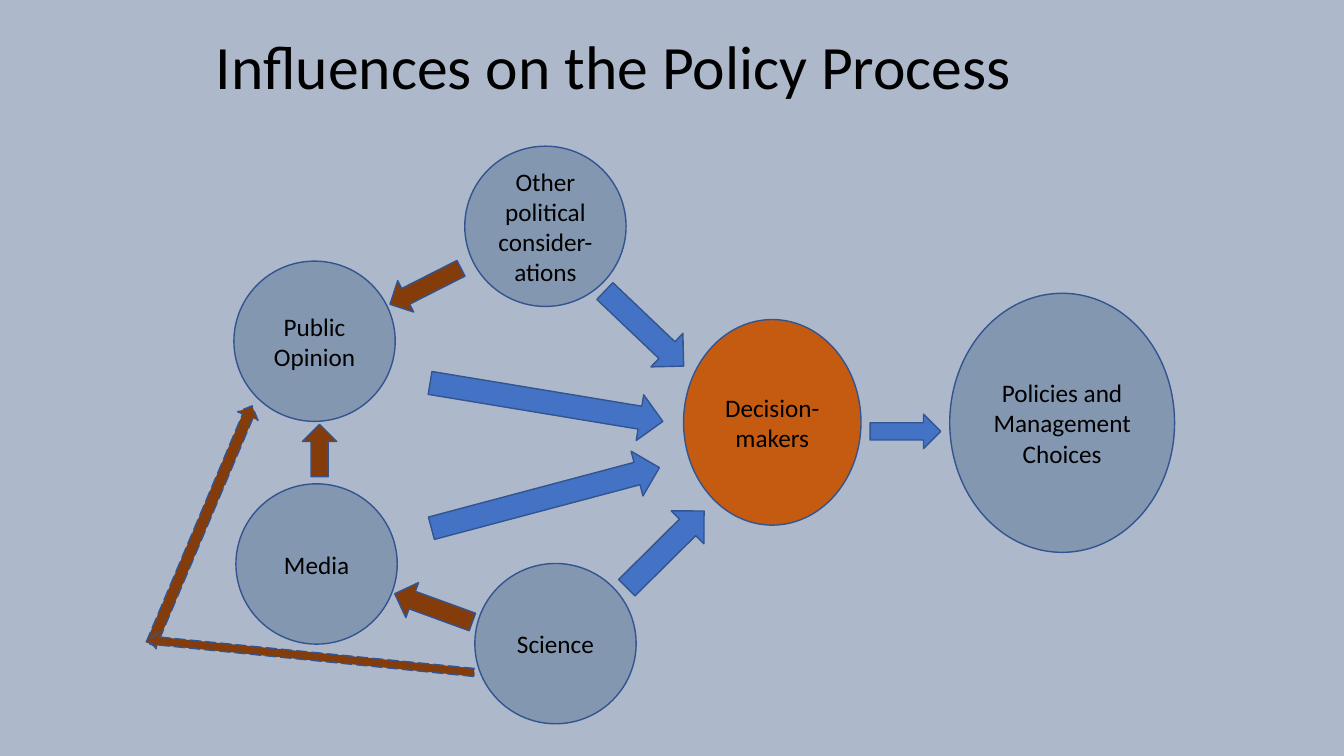
from pptx import Presentation
from pptx.dml.color import RGBColor
from pptx.enum.dml import MSO_LINE_DASH_STYLE as Dash
from pptx.enum.shapes import MSO_SHAPE as Shape
from pptx.enum.text import MSO_ANCHOR as Anchor, PP_ALIGN as Align
from pptx.util import Inches, Pt

BACKGROUND = RGBColor(0xAD, 0xB9, 0xCA)
BLACK = RGBColor(0x00, 0x00, 0x00)
SLATE = RGBColor(0x84, 0x97, 0xB0)
ORANGE = RGBColor(0xC5, 0x5A, 0x11)
BLUE = RGBColor(0x44, 0x72, 0xC4)
BROWN = RGBColor(0x84, 0x3C, 0x0B)
OUTLINE = RGBColor(0x32, 0x54, 0x91)

SMALL = (1.6, 1.59)
# Text, left, top, (width, height), fill
CIRCLES = [
    ("Policies and Management Choices", 9.42, 2.91, (2.23, 2.57), SLATE),
    ("Media", 2.34, 4.8, SMALL, SLATE),
    ("Decision-makers", 6.78, 3.17, (1.76, 2.04), ORANGE),
    ("Public Opinion", 2.32, 2.59, SMALL, SLATE),
    ("Science", 4.71, 5.59, SMALL, SLATE),
    ("Other political consider-ations", 4.61, 1.45, SMALL, SLATE),
]
# Centre x, centre y, length, thickness, clockwise angle
DECISION_ARROWS = [
    (8.98, 4.28, 0.7, 0.34, 0),
    (6.39, 3.26, 1.08, 0.46, 43.6),
    (5.42, 3.99, 2.34, 0.46, 9.4),
    (5.41, 4.94, 2.34, 0.46, 345.1),
    (6.6, 5.45, 1.08, 0.46, 315.2),
]
OPINION_ARROWS = [
    (4.3, 6.03, 0.82, 0.37, 200),
    (4.22, 2.84, 0.79, 0.35, 153.1),
    (3.17, 4.47, 0.52, 0.34, 270),
]
DASHED_ARROWS = [
    (2, 5.21, 2.57, 0.22, 292.9),
    (3.09, 6.51, 3.24, 0.16, 185.7),
]


def write(shape, text, size, spacing=1.0):
    frame = shape.text_frame
    frame.word_wrap = True
    frame.vertical_anchor = Anchor.MIDDLE
    para = frame.paragraphs[0]
    para.alignment = Align.CENTER
    para.line_spacing = spacing
    span = para.add_run()
    span.text = text
    for name, value in {"name": "Calibri", "size": Pt(size)}.items():
        setattr(span.font, name, value)
    span.font.color.rgb = BLACK


def add_outlined(page, kind, box, fill):
    shape = page.shapes.add_shape(kind, *map(Inches, box))
    shape.shadow.inherit = False
    shape.fill.solid()
    shape.fill.fore_color.rgb = fill
    shape.line.color.rgb = OUTLINE
    shape.line.width = Pt(1)
    return shape


def add_title(page, box):
    title = page.shapes.add_textbox(*map(Inches, box))
    write(title, "Influences on the Policy Process", 44, 0.9)


def add_circles(page, origin):
    for text, left, top, size, fill in CIRCLES:
        box = (origin[0] + left, origin[1] + top, *size)
        write(add_outlined(page, Shape.OVAL, box, fill), text, 18)


def add_arrows(page, origin, arrows, fill, dash=None):
    for x, y, length, thickness, angle in arrows:
        box = (origin[0] + x - length / 2, origin[1] + y - thickness / 2,
               length, thickness)
        arrow = add_outlined(page, Shape.RIGHT_ARROW, box, fill)
        arrow.rotation = angle
        if dash:
            arrow.line.dash_style = dash


def add_diagram(page, origin):
    add_circles(page, origin)
    add_arrows(page, origin, DECISION_ARROWS, BLUE)
    add_arrows(page, origin, OPINION_ARROWS, BROWN)
    add_arrows(page, origin, DASHED_ARROWS, BROWN, Dash.LONG_DASH)


def main():
    deck = Presentation()
    deck.slide_width, deck.slide_height = Inches(13.33), Inches(7.5)
    page = deck.slides.add_slide(deck.slide_layouts[6])
    page.background.fill.solid()
    page.background.fill.fore_color.rgb = BACKGROUND
    add_title(page, (0.34, 0.19, 11.5, 0.99))
    add_diagram(page, (0, 0))
    deck.save("out.pptx")


if __name__ == "__main__":
    main()
